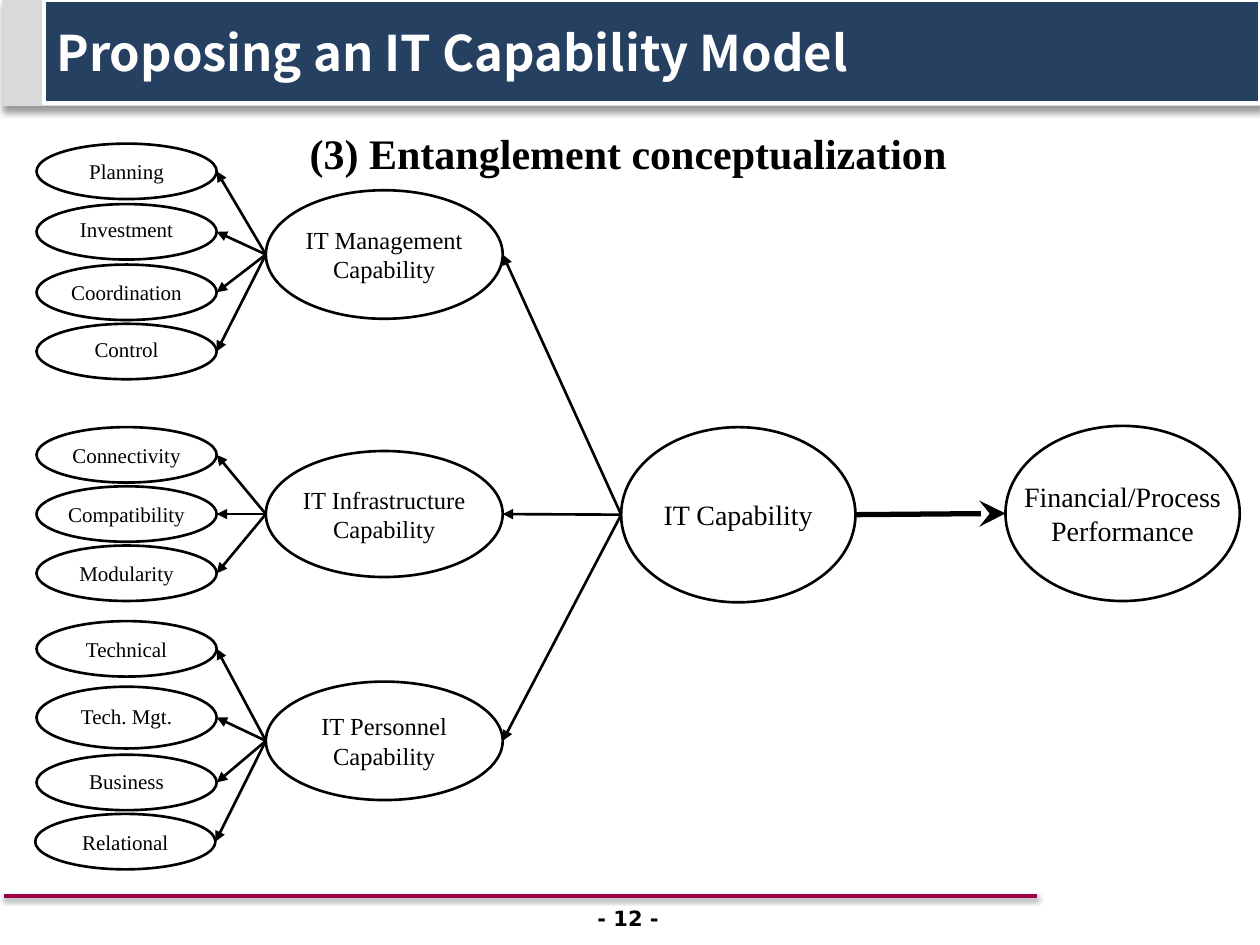
"""Build the slide of the entanglement model of IT capability."""
from dataclasses import dataclass

from lxml import etree
from pptx import Presentation
from pptx.dml import color
from pptx.enum import shapes, text
from pptx.oxml import ns
from pptx import util as u

BLACK = color.RGBColor(0x00, 0x00, 0x00)
WHITE = color.RGBColor(0xFF, 0xFF, 0xFF)
GREY = color.RGBColor(0xD9, 0xD9, 0xD9)
NAVY = color.RGBColor(0x25, 0x40, 0x61)
WINE = color.RGBColor(0x9C, 0x00, 0x42)
SERIF = "Times New Roman"


@dataclass
class Node:
    label: str
    left: float
    top: float
    width: float
    height: float
    size: int
    pitch: float | None = None

    @property
    def start(self) -> tuple[float, float]:
        return self.left, self.top + self.height / 2

    @property
    def end(self) -> tuple[float, float]:
        return self.left + self.width, self.top + self.height / 2


def leaf(label: str, top: float, pitch: float | None = None,
         left: float = 0.29, height: float = 0.44) -> Node:
    return Node(label, left, top, 1.43, height, 12, pitch)


def group(label: str, top: float, height: float) -> Node:
    return Node(label, 2.11, top, 1.88, height, 14)


CORE = Node("IT Capability", 4.93, 3.39, 1.86, 1.39, 16)
GOAL = Node("Financial/Process\nPerformance", 7.98, 3.38, 1.86, 1.39, 16)
TREE = [
    (group("IT Management\nCapability", 1.51, 1.02),
     [leaf("Planning", 1.14), leaf("Investment", 1.62, 0.8),
      leaf("Coordination", 2.1), leaf("Control", 2.57, 0.8)]),
    (group("IT Infrastructure\nCapability", 3.58, 1),
     [leaf("Connectivity", 3.39), leaf("Compatibility", 3.86),
      leaf("Modularity", 4.33)]),
    (group("IT Personnel\vCapability", 5.41, 0.94),
     [leaf("Technical", 4.93), leaf("Tech. Mgt.", 5.45, 0.9, height=0.49),
      leaf("Business", 5.99, 0.9), leaf("Relational", 6.46, left=0.28)]),
]


def write(shape, words: str, size: int, face: str, ink=BLACK, bold=False,
          align=text.PP_ALIGN.CENTER, pitch: float | None = None,
          anchor=text.MSO_ANCHOR.MIDDLE) -> None:
    frame = shape.text_frame
    frame.text = words
    frame.word_wrap = False
    frame.vertical_anchor = anchor
    for para in frame.paragraphs:
        para.alignment = align
        if pitch:
            para.line_spacing = pitch
        for run in para.runs:
            font = run.font
            font.size, font.name, font.bold = u.Pt(size), face, bold
            font.color.rgb = ink
            for tag in ("a:ea", "a:cs"):
                etree.SubElement(run._r.rPr, ns.qn(tag), typeface=face)


def shade(shape, alpha: int, blur: float, dist: float) -> None:
    props = shape._element.spPr
    for old in props.findall(ns.qn("a:effectLst")):
        props.remove(old)
    effect = etree.SubElement(props, ns.qn("a:effectLst"))
    outer = etree.SubElement(
        effect, ns.qn("a:outerShdw"), blurRad=str(u.Pt(blur)),
        dist=str(u.Pt(dist)), dir="5400000", algn="t", rotWithShape="0")
    ink = etree.SubElement(outer, ns.qn("a:srgbClr"), val=str(BLACK))
    etree.SubElement(ink, ns.qn("a:alpha"), val=str(alpha * 1000))


def block(slide, kind, left: float, top: float, width: float, height: float,
          fill=None, line=None, weight: float = 1.5):
    shape = slide.shapes.add_shape(
        kind, *map(u.Inches, (left, top, width, height)))
    shape.shadow.inherit = False
    if fill is None:
        shape.fill.background()
    else:
        shape.fill.solid()
        shape.fill.fore_color.rgb = fill
    if line is None:
        shape.line.fill.background()
    else:
        shape.line.color.rgb = line
        shape.line.width = u.Pt(weight)
    return shape


def link(slide, start: tuple[float, float], end: tuple[float, float],
         ink=BLACK, weight: float = 1.5, head: str | None = "triangle",
         scale: str = "med"):
    line = slide.shapes.add_connector(
        shapes.MSO_CONNECTOR.STRAIGHT, *map(u.Inches, start + end))
    line.line.color.rgb = ink
    line.line.width = u.Pt(weight)
    if head:
        etree.SubElement(line.line._get_or_add_ln(), ns.qn("a:tailEnd"),
                         type=head, w=scale, len=scale)
    etree.SubElement(line._element.spPr, ns.qn("a:effectLst"))
    return line


def draw(slide, node: Node) -> None:
    shape = block(slide, shapes.MSO_SHAPE.OVAL, node.left, node.top,
                  node.width, node.height, line=BLACK)
    write(shape, node.label, node.size, SERIF, pitch=node.pitch)


def label(slide, left: float, top: float, width: float, height: float,
          words: str, size: int, face: str, align) -> None:
    box = slide.shapes.add_textbox(
        *map(u.Inches, (left, top, width, height)))
    write(box, words, size, face, bold=True, align=align,
          anchor=text.MSO_ANCHOR.TOP)


def frame(slide) -> None:
    band = block(slide, shapes.MSO_SHAPE.ROUNDED_RECTANGLE,
                 0.02, -0.01, 10, 0.85, GREY)
    band.adjustments[0] = 0
    shade(band, 40, 4, 3)
    rule = link(slide, (0.03, 7.11), (8.23, 7.11), WINE, 2, None)
    shade(rule, 38, 3.1, 1.6)
    title = block(slide, shapes.MSO_SHAPE.RECTANGLE,
                  0.35, 0, 9.65, 0.82, NAVY, WHITE, 2.25)
    write(title, "Proposing an IT Capability Model", 28, "Noto Sans CJK KR",
          WHITE, True, text.PP_ALIGN.LEFT)
    label(slide, 3.82, 7.14, 2.33, 0.28, "- 12 -", 12, "DejaVu Sans",
          text.PP_ALIGN.CENTER)


def main() -> None:
    deck = Presentation()
    deck.slide_width, deck.slide_height = u.Inches(10), u.Inches(7.5)
    slide = deck.slides.add_slide(deck.slide_layouts[6])
    frame(slide)
    draw(slide, CORE)
    for hub, leaves in TREE:
        draw(slide, hub)
        link(slide, CORE.start, hub.end)
        for node in leaves:
            draw(slide, node)
            link(slide, hub.start, node.end)
    draw(slide, GOAL)
    link(slide, CORE.end, GOAL.start, weight=3, head="stealth", scale="lg")
    label(slide, 2.36, 0.96, 5.39, 0.5, "(3) Entanglement conceptualization",
          24, SERIF, text.PP_ALIGN.LEFT)
    deck.save("out.pptx")


if __name__ == "__main__":
    main()
